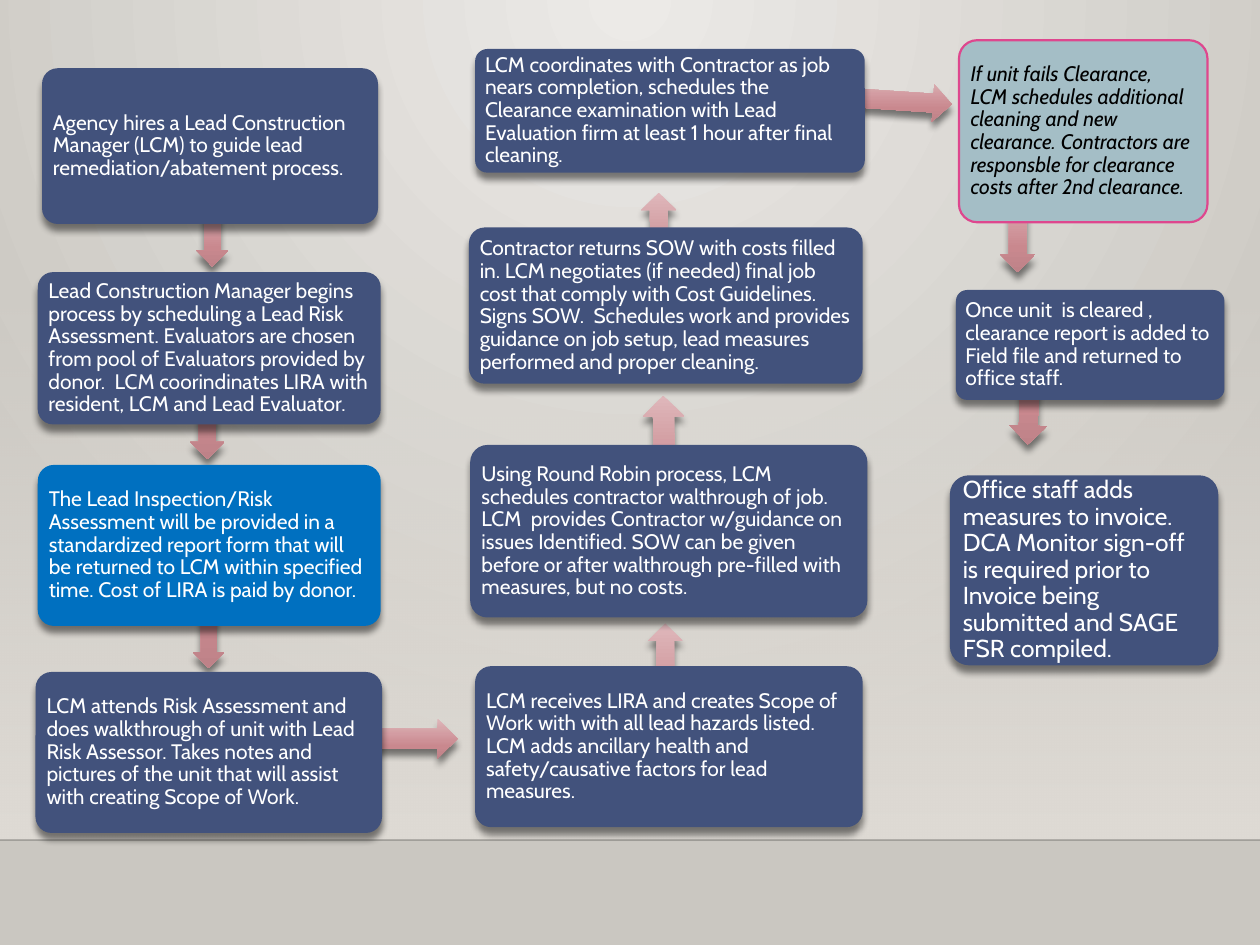
from dataclasses import dataclass

from pptx import Presentation
from pptx.dml.color import RGBColor
from pptx.enum.shapes import MSO_CONNECTOR, MSO_SHAPE
from pptx.enum.text import MSO_ANCHOR, PP_ALIGN
from pptx.oxml import parse_xml
from pptx.oxml.ns import nsdecls, qn
from pptx.util import Pt

ROUND = MSO_SHAPE.ROUNDED_RECTANGLE
RECT = MSO_SHAPE.RECTANGLE
STRIPED = MSO_SHAPE.STRIPED_RIGHT_ARROW
NOTCHED = MSO_SHAPE.NOTCHED_RIGHT_ARROW
STRAIGHT = MSO_CONNECTOR.STRAIGHT
MIDDLE = MSO_ANCHOR.MIDDLE
LEFT = PP_ALIGN.LEFT


@dataclass(frozen=True)
class Theme:
    font: str = "Cabin"
    body: int = 12
    large: int = 14
    navy: str = "42527C"
    blue: str = "0070C0"
    mist: str = "A4BEC6"
    pink: str = "DE478E"
    white: str = "FFFFFF"
    black: str = "000000"
    wall: tuple = ((0, "ECEAE7", 100), (100, "CAC7C1", 100))
    glow: tuple = ((0, "DFDBD5", 0), (100, "DFDBD5", 100))
    rose: tuple = ((0, "DFB7BB", 100), (69, "C9888E", 100), (100, "BE8288", 100))


THEME = Theme()
DOWN = '<a:lin ang="5400000" scaled="0"/>'
SPOT = '<a:path path="circle"><a:fillToRect l="43000" t="0" r="43000" b="100000"/></a:path>'


def blend(fill, host, stops, course=DOWN):
    """Give the host element a gradient that keeps its direction on the page."""
    fill.gradient()
    marks = "".join(
        f'<a:gs pos="{pos * 1000}"><a:srgbClr val="{color}">'
        f'<a:alpha val="{alpha * 1000}"/></a:srgbClr></a:gs>'
        for pos, color, alpha in stops
    )
    host.replace(host.find(qn("a:gradFill")), parse_xml(
        f'<a:gradFill {nsdecls("a")} rotWithShape="0"><a:gsLst>{marks}</a:gsLst>{course}</a:gradFill>'
    ))


def shade(shape):
    """Drop a soft shadow below the shape."""
    shape.shadow.inherit = False
    shape.element.spPr.find(qn("a:effectLst")).append(parse_xml(
        f'<a:outerShdw {nsdecls("a")} blurRad="{Pt(4)}" dist="{Pt(4)}" dir="5400000" rotWithShape="0">'
        f'<a:srgbClr val="{THEME.black}"><a:alpha val="48000"/></a:srgbClr></a:outerShdw>'
    ))


def write(frame, text, size=THEME.body, color=THEME.white, italic=False):
    """Fill a text frame with one formatted paragraph."""
    frame.word_wrap = True
    frame.vertical_anchor = MIDDLE
    inset = Pt(0.3 * size)
    frame.margin_left = frame.margin_right = inset
    frame.margin_top = frame.margin_bottom = inset
    para = frame.paragraphs[0]
    para.text = text
    para.alignment = LEFT
    para.line_spacing = 0.9
    para.space_after = Pt(0.35 * size)
    for run in para.runs:
        run.font.name = THEME.font
        run.font.size = Pt(size)
        run.font.italic = italic
        run.font.color.rgb = RGBColor.from_string(color)


class Chart:
    """Draw flow chart parts on one slide."""

    def __init__(self, slide, theme):
        """Keep the slide and its style."""
        self.slide = slide
        self.theme = theme

    def shape(self, kind, area):
        """Add a plain shape without line or shadow."""
        shape = self.slide.shapes.add_shape(kind, *map(Pt, area))
        shape.line.fill.background()
        shape.shadow.inherit = False
        return shape

    def stage(self):
        """Paint the wall, its glow and the floor line."""
        fill = self.slide.background.fill
        fill.solid()
        blend(fill, self.slide.element.find(".//" + qn("p:bgPr")), self.theme.wall, SPOT)
        panel = self.shape(RECT, (0, 158.5, 720, 321.5))
        blend(panel.fill, panel.element.spPr, self.theme.glow)
        floor = self.slide.shapes.add_connector(STRAIGHT, 0, Pt(480), Pt(720), Pt(480))
        floor.line.width = Pt(1)
        floor.line.color.rgb = RGBColor.from_string(self.theme.black)
        spot = floor.element.spPr
        spot.find(".//" + qn("a:srgbClr")).append(
            parse_xml(f'<a:alpha {nsdecls("a")} val="20000"/>'))
        spot.append(parse_xml(f'<a:effectLst {nsdecls("a")}/>'))

    def arrow(self, area, turn, kind=STRIPED):
        """Add a turned block arrow."""
        arrow = self.shape(kind, area)
        arrow.rotation = turn
        blend(arrow.fill, arrow.element.spPr, self.theme.rose)
        shade(arrow)

    def box(self, area, text, fill=THEME.navy, edge=None, **style):
        """Add a rounded step with its text."""
        box = self.shape(ROUND, area)
        box.adjustments[0] = 0.1
        box.fill.solid()
        box.fill.fore_color.rgb = RGBColor.from_string(fill)
        if edge:
            box.line.color.rgb = RGBColor.from_string(edge)
            box.line.width = Pt(1.25)
        else:
            shade(box)
        write(box.text_frame, text, **style)


STEPS = [
    ((103.7, 125.3, 35.3, 18.7), 90.3, STRIPED, (24, 39, 192, 89),
     "Agency hires a Lead Construction Manager (LCM) to guide lead remediation/abatement process.", {}),
    ((85, 219, 67, 19.5), 90, STRIPED, (21.6, 155.5, 196, 87),
     "Lead Construction Manager begins process by scheduling a Lead Risk Assessment. "
     "Evaluators are chosen from pool of Evaluators provided by donor.  "
     "LCM coorindinates LIRA with resident, LCM and Lead Evaluator.", {}),
    ((72, 325.5, 94.5, 18), 90, STRIPED, (21.6, 265.7, 196, 92),
     "The Lead Inspection/Risk Assessment will be provided in a standardized report form that will "
     "be returned to LCM within specified time. Cost of LIRA is paid by donor.",
     {"fill": THEME.blue}),
    ((116, 410.5, 145.5, 23), 0.1, STRIPED, (20.3, 384, 198, 92),
     "LCM attends Risk Assessment and does walkthrough of unit with Lead Risk Assessor. "
     "Takes notes and pictures of the unit that will assist with creating Scope of Work.", {}),
    ((343.5, 383, 73.5, 20), 269.9, STRIPED, (271.5, 380.7, 221.5, 92),
     "LCM receives LIRA and creates Scope of Work with with all lead hazards listed. "
     "LCM adds ancillary health and safety/causative factors for lead measures.", {}),
    ((343.5, 250, 72, 24), 269.2, STRIPED, (268.7, 254.3, 227, 98.6),
     "Using Round Robin process, LCM schedules contractor walthrough of job. "
     "LCM  provides Contractor w/guidance on issues Identified. "
     "SOW can be given before or after walthrough pre-filled with measures, but no costs.", {}),
    ((347, 129.5, 59, 20), 269.9, STRIPED, (268, 130, 225, 89.3),
     "Contractor returns SOW with costs filled in. LCM negotiates (if needed) final job cost "
     "that comply with Cost Guidelines. Signs SOW.  Schedules work and provides guidance on "
     "job setup, lead measures performed and proper cleaning.", {}),
    ((457, 46, 87, 21.5), 3.8, STRIPED, (271.5, 28, 222.7, 70.7),
     "LCM coordinates with Contractor as job nears completion, schedules the Clearance examination "
     "with Lead Evaluation firm at least 1 hour after final cleaning.", {}),
    ((558.5, 122.5, 46, 20), 89.9, NOTCHED, (548, 23, 142, 104),
     "If unit fails Clearance,\vLCM schedules additional cleaning and new clearance. "
     "Contractors are responsble for clearance costs after 2nd clearance.",
     {"fill": THEME.mist, "edge": THEME.pink, "color": THEME.black, "italic": True}),
    ((554.5, 209.5, 67.5, 21.5), 91.7, NOTCHED, (546.3, 165.7, 153.4, 62.8),
     "Once unit  is cleared , clearance report is added to Field file and returned to office staff.", {}),
    (None, 0, None, (542.8, 271.6, 153.4, 108.6),
     "Office staff adds measures to invoice. DCA Monitor sign-off is required prior to "
     "Invoice being submitted and SAGE FSR compiled.", {"size": THEME.large}),
]


def main():
    """Build the flow chart and save it."""
    deck = Presentation()
    deck.slide_width, deck.slide_height = Pt(720), Pt(540)
    chart = Chart(deck.slides.add_slide(deck.slide_layouts[6]), THEME)
    chart.stage()
    for path, turn, kind, area, text, style in STEPS:
        if path:
            chart.arrow(path, turn, kind)
        chart.box(area, text, **style)
    deck.save("out.pptx")


if __name__ == "__main__":
    main()
